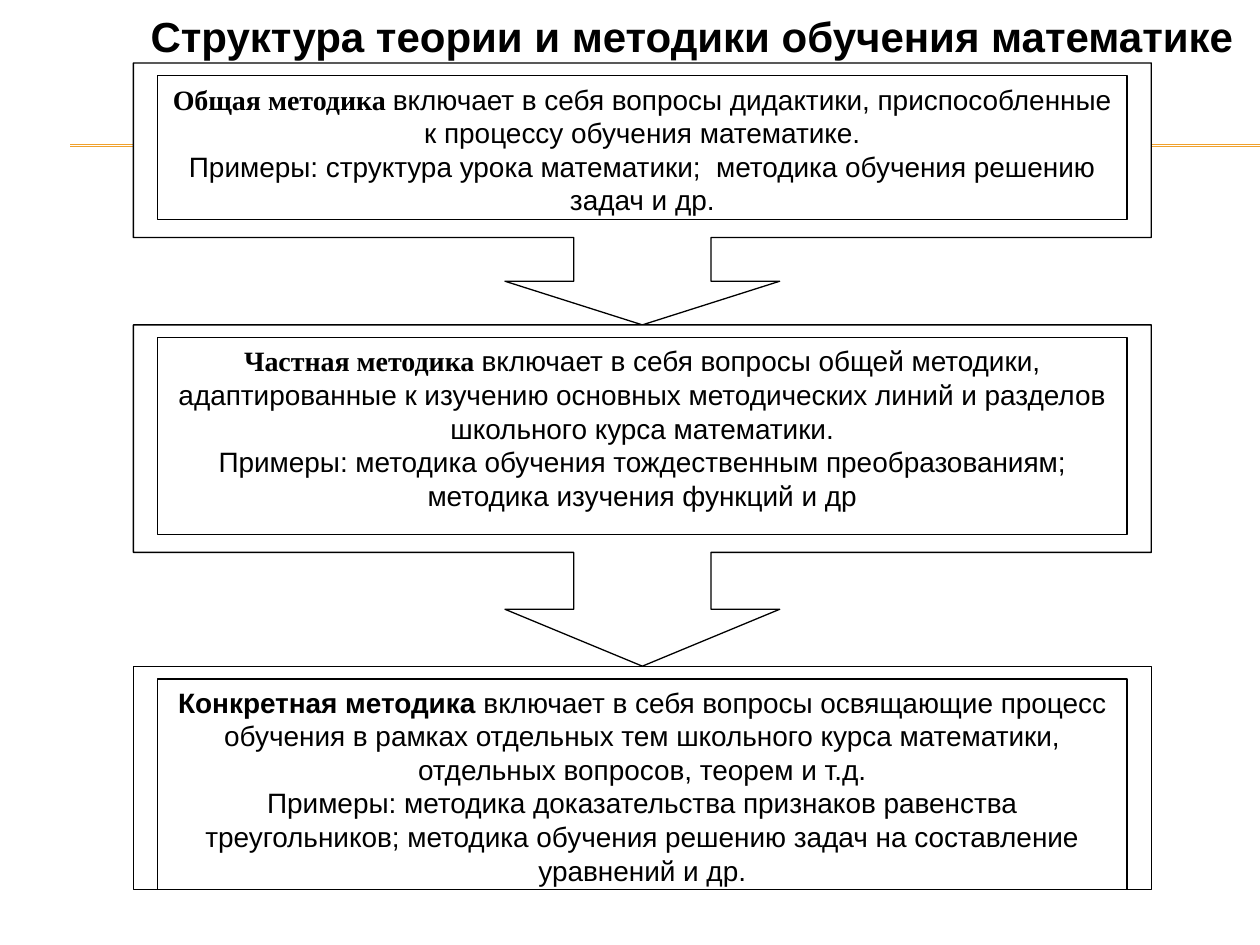
import dataclasses

import pptx
import pptx.dml.color
import pptx.enum.shapes
import pptx.enum.text
import pptx.oxml
import pptx.util

Cm = pptx.util.Cm
SHAPE = pptx.enum.shapes.MSO_SHAPE
ALIGN = pptx.enum.text.PP_ALIGN
ANCHOR = pptx.enum.text.MSO_ANCHOR


def rgb(value):
    return pptx.dml.color.RGBColor.from_string(value)


@dataclasses.dataclass(frozen=True)
class Theme:
    text: str = "000000"
    paper: str = "FFFFFF"
    outline: str = "000000"
    accent: str = "F0A22E"
    font: str = "Arial"
    serif: str = "Times New Roman"
    title_size: float = 24
    body_size: float = 16
    line_width: float = 0.75


THEME = Theme()

# Each level: top, height, text height, lead font, lead, description, examples
LEVELS = [
    (1.27, 5.28, 2.9, THEME.serif, "Общая методика ",
     "включает в себя вопросы дидактики, приспособленные к процессу обучения математике.",
     "Примеры: структура урока математики;  методика обучения решению задач и др."),
    (6.55, 6.88, 3.96, THEME.serif, "Частная методика ",
     "включает в себя вопросы общей методики, адаптированные к изучению основных "
     "методических линий и разделов школьного курса математики.",
     "Примеры: методика обучения тождественным преобразованиям; методика изучения функций и др"),
    (13.43, 4.5, 4.24, THEME.font, "Конкретная методика ",
     "включает в себя вопросы освящающие процесс обучения в рамках отдельных тем "
     "школьного курса математики, отдельных вопросов, теорем и т.д.",
     "Примеры: методика доказательства признаков равенства треугольников; "
     "методика обучения решению задач на составление уравнений и др."),
]


def add_text(paragraph, text, *, size=THEME.body_size, font=THEME.font, bold=False,
             align=ALIGN.CENTER):
    paragraph.alignment = align
    run = paragraph.add_run()
    run.text = text
    run.font.size = pptx.util.Pt(size)
    run.font.name = font
    run.font.bold = bold
    run.font.color.rgb = rgb(THEME.text)


def add_box(shapes, kind, left, top, width, height):
    shape = shapes.add_shape(kind, Cm(left), Cm(top), Cm(width), Cm(height))
    shape.shadow.inherit = False
    shape.fill.solid()
    shape.fill.fore_color.rgb = rgb(THEME.paper)
    shape.line.color.rgb = rgb(THEME.outline)
    shape.line.width = pptx.util.Pt(THEME.line_width)
    return shape


def add_title(slide, left, top, width, height):
    title = slide.shapes.title
    title.left, title.top, title.width, title.height = map(Cm, (left, top, width, height))
    frame = title.text_frame
    frame.word_wrap = True
    frame.auto_size = pptx.enum.text.MSO_AUTO_SIZE.NONE
    frame.vertical_anchor = ANCHOR.TOP
    frame.margin_top = Cm(0.18)
    add_text(frame.paragraphs[0], "Структура теории и методики обучения математике",
             size=THEME.title_size, bold=True, align=ALIGN.RIGHT)


def add_rule(slide, left, top, right):
    """Double accent line behind the diagram."""
    for y in (top, top + 0.03):
        line = slide.shapes.add_connector(
            pptx.enum.shapes.MSO_CONNECTOR.STRAIGHT, Cm(left), Cm(y), Cm(right), Cm(y))
        line.line.color.rgb = rgb(THEME.accent)
        line.line.width = pptx.util.Pt(THEME.line_width)
        properties = line._element.spPr
        properties.append(pptx.oxml.parse_xml(
            '<a:effectLst xmlns:a="http://schemas.openxmlformats.org/drawingml/2006/main"/>'))


def add_level(shapes, left, width, level, has_arrow):
    """Frame, with an arrow to the next level if any, and its text box."""
    top, height, text_height, lead_font, lead, description, examples = level
    kind = SHAPE.DOWN_ARROW_CALLOUT if has_arrow else SHAPE.RECTANGLE
    frame = add_box(shapes, kind, left, top, width, height)
    if has_arrow:
        half_head = 2.77 / height
        for index, value in enumerate((half_head, half_head, 1 / 6, 2 / 3)):
            frame.adjustments[index] = value

    inset_x, inset_y = 0.49, 0.26
    box = add_box(shapes, SHAPE.RECTANGLE, left + inset_x, top + inset_y,
                  width - 2 * inset_x, text_height)
    text_frame = box.text_frame
    text_frame.word_wrap = True
    text_frame.vertical_anchor = ANCHOR.TOP
    paragraph = text_frame.paragraphs[0]
    add_text(paragraph, lead, font=lead_font, bold=True)
    add_text(paragraph, description)
    add_text(text_frame.add_paragraph(), examples)


def main():
    presentation = pptx.Presentation()
    presentation.slide_width, presentation.slide_height = Cm(25.4), Cm(19.05)
    slide = presentation.slides.add_slide(presentation.slide_layouts[5])

    add_rule(slide, 1.42, 2.92, 25.4)
    add_title(slide, 1.02, 0.03, 24.1, 2.31)

    # Diagram of the three levels
    diagram = slide.shapes.add_group_shape()
    for level in LEVELS:
        add_level(diagram.shapes, 2.69, 20.52, level, has_arrow=level is not LEVELS[-1])

    presentation.save("out.pptx")


if __name__ == "__main__":
    main()
